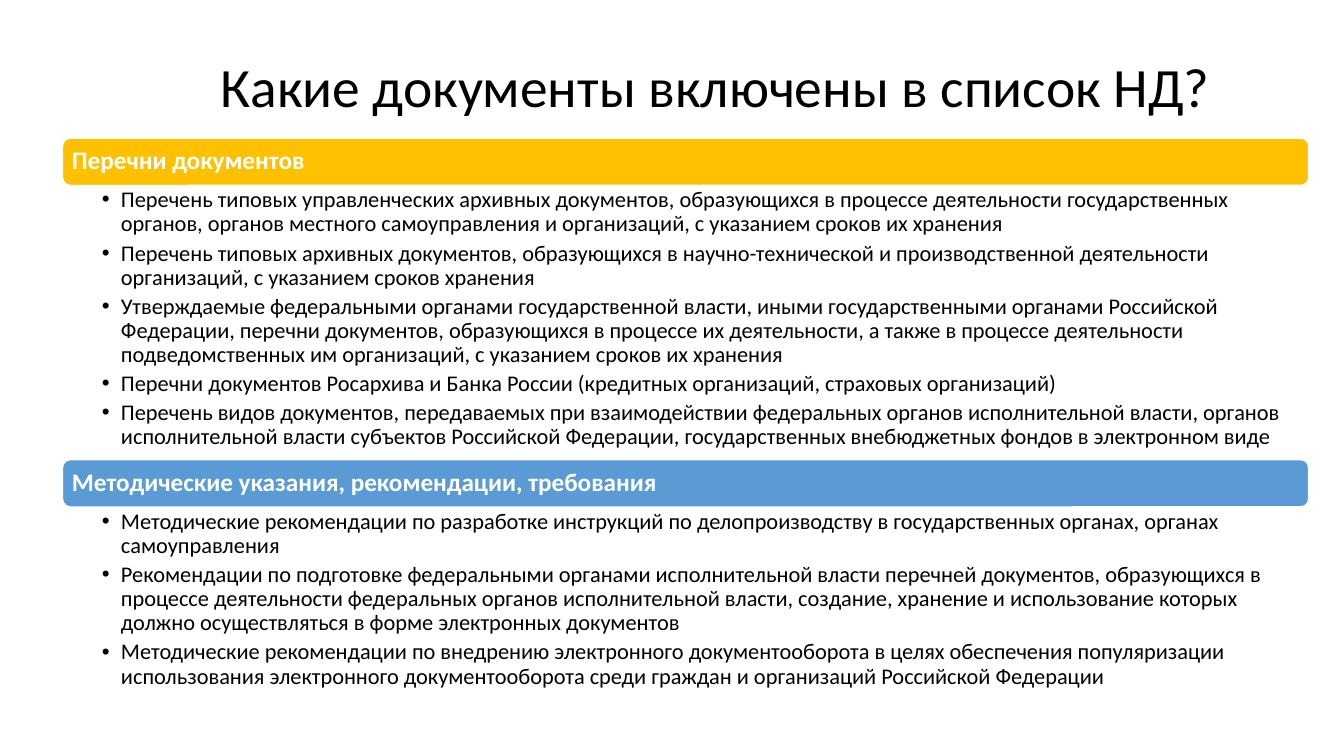
from dataclasses import dataclass

from lxml import etree
from pptx import Presentation
from pptx.dml.color import RGBColor
from pptx.enum import shapes, text
from pptx.oxml import ns
from pptx.util import Inches, Pt


@dataclass(frozen=True)
class Theme:
    font: str = "Calibri"
    ink: RGBColor = RGBColor(0, 0, 0)
    paper: RGBColor = RGBColor(255, 255, 255)
    gold: RGBColor = RGBColor(0xFF, 0xC0, 0x00)
    blue: RGBColor = RGBColor(0x5B, 0x9B, 0xD5)
    title_size: float = 39.6
    heading_size: float = 18
    item_size: float = 16
    line_spacing: float = 0.9
    item_gap: float = 3.5


THEME = Theme()
BAR_HEIGHT = 0.47
LIST_OFFSET = 0.48
BULLET_INDENT = 0.19

SECTIONS = [
    ((0.62, 1.37, 12.36, 3.2), THEME.gold, "Перечни документов", [
        "Перечень типовых управленческих архивных документов, образующихся в процессе деятельности "
        "государственных органов, органов местного самоуправления и организаций, с указанием сроков их хранения",
        "Перечень типовых архивных документов, образующихся в научно-технической и производственной "
        "деятельности организаций, с указанием сроков хранения",
        "Утверждаемые федеральными органами государственной власти, иными государственными органами "
        "Российской Федерации, перечни документов, образующихся в процессе их деятельности, а также в процессе "
        "деятельности подведомственных им организаций, с указанием сроков их хранения",
        "Перечни документов Росархива и Банка России (кредитных организаций, страховых организаций)",
        "Перечень видов документов, передаваемых при взаимодействии федеральных органов исполнительной "
        "власти, органов исполнительной власти субъектов Российской Федерации, государственных "
        "внебюджетных фондов в электронном виде",
    ]),
    ((0.62, 4.56, 12.36, 2.65), THEME.blue, "Методические указания, рекомендации, требования", [
        "Методические рекомендации по разработке инструкций по делопроизводству в государственных органах, "
        "органах самоуправления",
        "Рекомендации по подготовке федеральными органами исполнительной власти перечней документов, "
        "образующихся в процессе деятельности федеральных органов исполнительной власти, создание, хранение "
        "и использование которых должно осуществляться в форме электронных документов",
        "Методические рекомендации по внедрению электронного документооборота в целях обеспечения "
        "популяризации использования электронного документооборота среди граждан и организаций "
        "Российской Федерации",
    ]),
]


def set_frame(frame, left, top, right, bottom, anchor=text.MSO_ANCHOR.TOP):
    frame.word_wrap = True
    frame.vertical_anchor = anchor
    frame.margin_left, frame.margin_top = Inches(left), Inches(top)
    frame.margin_right, frame.margin_bottom = Inches(right), Inches(bottom)


def style(para, size, color, bold=False):
    para.alignment = text.PP_ALIGN.LEFT
    para.line_spacing = THEME.line_spacing
    para.font.name = THEME.font
    para.font.size = Pt(size)
    para.font.bold = bold
    para.font.color.rgb = color


def add_bullet(para):
    props = para._p.get_or_add_pPr()
    props.set("marL", str(Inches(BULLET_INDENT)))
    props.set("indent", str(-Inches(BULLET_INDENT)))
    etree.SubElement(props, ns.qn("a:buFont"), typeface="Arial")
    etree.SubElement(props, ns.qn("a:buChar"), char="•")


def add_title(page, box, words):
    frame = page.shapes.add_textbox(*map(Inches, box)).text_frame
    set_frame(frame, 0.11, 0.05, 0.11, 0.05)
    frame.text = words
    style(frame.paragraphs[0], THEME.title_size, THEME.ink)


def add_section(page, box, color, heading, items):
    left, top, width, height = box
    bar = page.shapes.add_shape(
        shapes.MSO_SHAPE.ROUNDED_RECTANGLE, *map(Inches, (left, top, width, BAR_HEIGHT)))
    bar.shadow.inherit = False
    bar.fill.solid()
    bar.fill.fore_color.rgb = color
    bar.line.color.rgb = THEME.paper
    bar.line.width = Pt(1)
    set_frame(bar.text_frame, 0.07, 0.07, 0.07, 0.07, text.MSO_ANCHOR.MIDDLE)
    bar.text_frame.text = heading
    style(bar.text_frame.paragraphs[0], THEME.heading_size, THEME.paper, bold=True)

    list_box = (left, top + LIST_OFFSET, width, height - LIST_OFFSET)
    frame = page.shapes.add_textbox(*map(Inches, list_box)).text_frame
    set_frame(frame, 0.39, 0.02, 0.12, 0.02)
    frame.text = "\n".join(items)
    for para in frame.paragraphs:
        add_bullet(para)
        style(para, THEME.item_size, THEME.ink)
        para.space_after = Pt(THEME.item_gap)


def main():
    deck = Presentation()
    deck.slide_width, deck.slide_height = Inches(13.33), Inches(7.5)
    page = deck.slides.add_slide(deck.slide_layouts[6])
    add_title(page, (2.08, 0.54, 10.27, 0.58), "Какие документы включены в список НД?")
    for section in SECTIONS:
        add_section(page, *section)
    deck.save("out.pptx")


if __name__ == "__main__":
    main()
